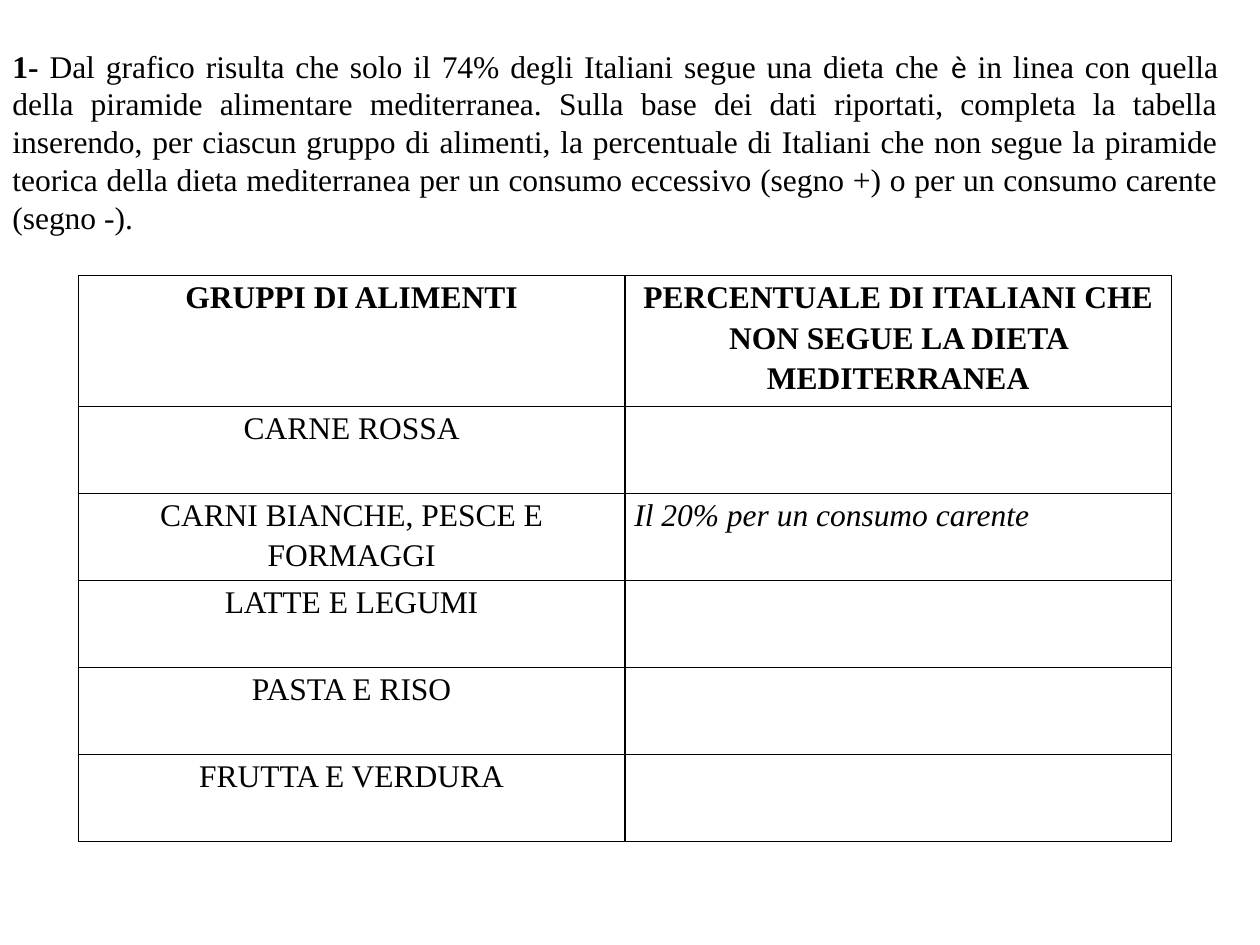
from lxml import etree
from pptx import Presentation
from pptx.dml.color import RGBColor
from pptx.enum import text
from pptx.oxml import ns
from pptx.util import Pt

BLACK = RGBColor(0, 0, 0)
WHITE = RGBColor(255, 255, 255)
SERIF, SANS = "Times New Roman", "Calibri"
CENTER, JUSTIFY = text.PP_ALIGN.CENTER, text.PP_ALIGN.JUSTIFY

QUESTION = [  # text, font, bold
    ("1- ", SERIF, True),
    ("Dal grafico risulta che solo il 74% degli Italiani segue una dieta che ", SERIF, False),
    ("è", SANS, False),
    (" in linea con quella della piramide alimentare mediterranea. Sulla base dei dati "
     "riportati, completa la tabella inserendo, per ciascun gruppo di alimenti, la "
     "percentuale di Italiani che non segue la piramide teorica della dieta mediterranea "
     "per un consumo eccessivo (segno +) o per un consumo carente (segno -).", SERIF, False),
]
ROWS = [
    ("GRUPPI DI ALIMENTI", "PERCENTUALE DI ITALIANI CHE NON SEGUE LA DIETA MEDITERRANEA"),
    ("CARNE ROSSA", ""),
    ("CARNI BIANCHE, PESCE E FORMAGGI", "Il 20% per un consumo carente"),
    ("LATTE E LEGUMI", ""),
    ("PASTA E RISO", ""),
    ("FRUTTA E VERDURA", ""),
]
COLUMN_WIDTH, HEADER_HEIGHT, ROW_HEIGHT = 312.3, 74.8, 49.7


def add_span(para, words, font=SERIF, bold=False, italic=False):
    span = para.add_run()
    span.text = words
    span.font.name, span.font.size = font, Pt(18)
    span.font.bold, span.font.italic = bold, italic
    span.font.color.rgb = BLACK


def add_borders(cell):
    properties = cell._tc.get_or_add_tcPr()
    for side in ("a:lnL", "a:lnR", "a:lnT", "a:lnB"):
        line = etree.SubElement(properties, ns.qn(side), w=str(Pt(1)))
        fill = etree.SubElement(line, ns.qn("a:solidFill"))
        etree.SubElement(fill, ns.qn("a:srgbClr"), val=str(BLACK))


def add_question(slide):
    box = slide.shapes.add_textbox(Pt(0), Pt(22.3), Pt(703.4), Pt(116.6))
    frame = box.text_frame
    frame.word_wrap = True
    frame.auto_size = text.MSO_AUTO_SIZE.SHAPE_TO_FIT_TEXT
    frame.vertical_anchor = text.MSO_ANCHOR.MIDDLE
    para = frame.paragraphs[0]
    para.alignment = JUSTIFY
    for words, font, bold in QUESTION:
        add_span(para, words, font, bold)


def add_food_table(slide):
    heights = [HEADER_HEIGHT] + [ROW_HEIGHT] * (len(ROWS) - 1)
    table = slide.shapes.add_table(len(ROWS), 2, Pt(44.8), Pt(157.5),
                                   Pt(2 * COLUMN_WIDTH), Pt(sum(heights))).table
    for column in table.columns:
        column.width = Pt(COLUMN_WIDTH)
    for r, (height, row) in enumerate(zip(heights, ROWS)):
        table.rows[r].height = Pt(height)
        for c, words in enumerate(row):
            cell = table.cell(r, c)
            add_borders(cell)
            cell.fill.solid()
            cell.fill.fore_color.rgb = WHITE
            cell.margin_left = cell.margin_right = Pt(5.4)
            cell.margin_top = cell.margin_bottom = Pt(0)
            if words:
                header, answer = r == 0, r > 0 and c == 1
                para = cell.text_frame.paragraphs[0]
                para.alignment = JUSTIFY if answer else CENTER
                para.line_spacing = 1.15
                add_span(para, words, bold=header, italic=answer)


def main():
    deck = Presentation()
    deck.slide_width, deck.slide_height = Pt(720), Pt(540)
    slide = deck.slides.add_slide(deck.slide_layouts[6])
    add_question(slide)
    add_food_table(slide)
    deck.save("out.pptx")


if __name__ == "__main__":
    main()
